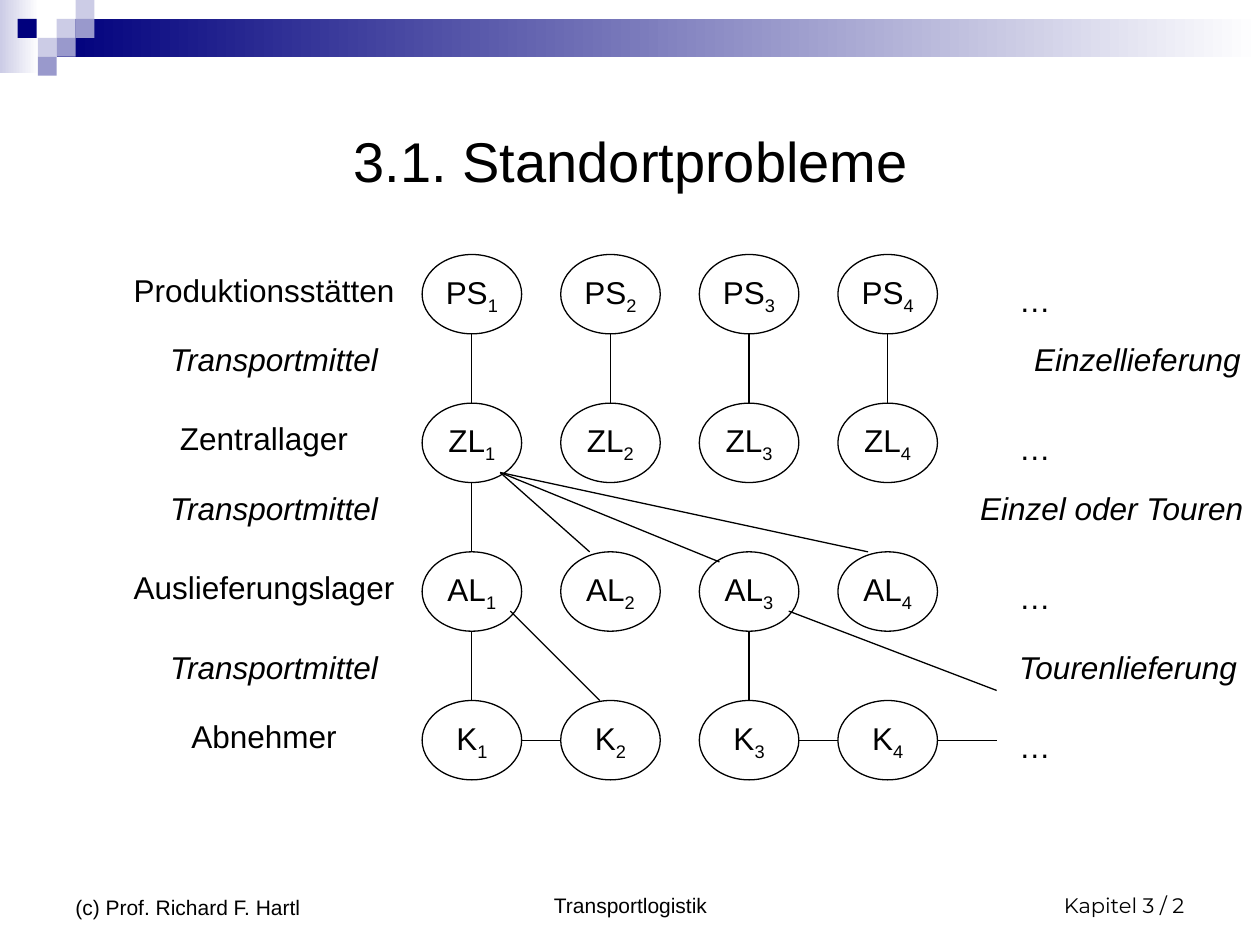
from lxml.etree import SubElement
from pptx import Presentation
from pptx.dml.color import RGBColor
from pptx.enum.shapes import MSO_CONNECTOR, MSO_SHAPE
from pptx.enum.text import MSO_ANCHOR, PP_ALIGN
from pptx.oxml.ns import qn
from pptx.util import Inches, Pt

BLACK = RGBColor(0x00, 0x00, 0x00)
WHITE = RGBColor(0xFF, 0xFF, 0xFF)
NAVY = RGBColor(0x00, 0x00, 0x7D)
LAVENDER = RGBColor(0xCC, 0xCC, 0xE6)
PERIWINKLE = RGBColor(0x99, 0x99, 0xCC)

NODE_WIDTH, NODE_HEIGHT = 0.79, 0.63
NODE_LEFT, NODE_TOP = 3.35, 2.02
COLUMN_STEP, ROW_STEP = 1.1, 1.18
COLUMNS = 4
LINK_END = 7.91
LABEL_WIDTH, LABEL_HEIGHT = 2.99, 0.47

# Name of the level, node prefix
LEVELS = [
    ("Produktionsstätten", "PS"),
    ("Zentrallager", "ZL"),
    ("Auslieferungslager", "AL"),
    ("Abnehmer", "K"),
]
# Top, left of the note, note
TRANSPORTS = [
    (2.65, 8.11, "Einzellieferung"),
    (3.83, 7.68, "Einzel oder Touren"),
    (5.09, 7.99, "Tourenlieferung"),
]
# Level, columns that have a straight link to the level below
VERTICAL_LINKS = [(0, range(COLUMNS)), (1, [0]), (2, [0, 2])]
SLANTED_LINKS = [
    ((3.97, 3.75), (4.68, 4.38)),
    ((3.97, 3.75), (5.71, 4.46)),
    ((3.97, 3.75), (6.89, 4.38)),
    ((4.05, 4.85), (4.76, 5.56)),
    ((6.26, 4.85), (LINK_END, 5.48)),
]
# Left, top, colour
HEADER_SQUARES = [
    (0.45, 0.15, LAVENDER),
    (0.6, 0, LAVENDER),
    (0.6, 0.15, PERIWINKLE),
    (0.3, 0.3, LAVENDER),
    (0.14, 0.15, NAVY),
    (0.45, 0.3, PERIWINKLE),
    (0.3, 0.45, PERIWINKLE),
]


class SlideBuilder:
    def __init__(self, slide, font="Arial", size=18):
        self.shapes = slide.shapes
        self.font = font
        self.size = size

    def style(self, para, align, size=None, font=None, italic=False):
        para.alignment = align
        para.font.name = font or self.font
        para.font.size = Pt(size or self.size)
        para.font.italic = italic
        para.font.color.rgb = BLACK

    def text(self, left, top, width, height, words, align=PP_ALIGN.LEFT,
             anchor=MSO_ANCHOR.TOP, **font_style):
        box = self.shapes.add_textbox(
            Inches(left), Inches(top), Inches(width), Inches(height))
        frame = box.text_frame
        frame.word_wrap = True
        frame.vertical_anchor = anchor
        para = frame.paragraphs[0]
        para.text = words
        self.style(para, align, **font_style)
        return para

    def label(self, left, top, words, italic=False):
        """Add a centred row label with a hanging indent."""
        para = self.text(left, top, LABEL_WIDTH, LABEL_HEIGHT, words,
                         PP_ALIGN.CENTER, italic=italic)
        properties = para._p.get_or_add_pPr()
        properties.set("marL", str(Inches(0.81)))
        properties.set("indent", str(Inches(-0.31)))

    def block(self, left, top, width, height, color, fade=False):
        """Add a rectangle, plain or fading to white on the right."""
        block = self.shapes.add_shape(
            MSO_SHAPE.RECTANGLE,
            Inches(left), Inches(top), Inches(width), Inches(height))
        block.shadow.inherit = False
        block.line.fill.background()
        if fade:
            block.fill.gradient()
            block.fill.gradient_angle = 0
            for stop, stop_color in zip(block.fill.gradient_stops, (color, WHITE)):
                stop.color.rgb = stop_color
        else:
            block.fill.solid()
            block.fill.fore_color.rgb = color

    def node(self, left, top, prefix, number):
        node = self.shapes.add_shape(
            MSO_SHAPE.OVAL, Inches(left), Inches(top),
            Inches(NODE_WIDTH), Inches(NODE_HEIGHT))
        node.shadow.inherit = False
        node.fill.background()
        node.line.color.rgb = BLACK
        node.line.width = Pt(0.75)
        frame = node.text_frame
        frame.word_wrap = False
        frame.vertical_anchor = MSO_ANCHOR.MIDDLE
        para = frame.paragraphs[0]
        self.style(para, PP_ALIGN.CENTER)
        para.add_run().text = prefix
        subscript = para.add_run()
        subscript.text = str(number)
        subscript.font._element.set("baseline", "-25000")
        return node

    def link(self, start, end, target=None):
        """Add a line; a target node is joined at its top."""
        line = self.shapes.add_connector(
            MSO_CONNECTOR.STRAIGHT, *(Inches(value) for value in (*start, *end)))
        line.line.color.rgb = BLACK
        line.line.width = Pt(0.75)
        SubElement(line._element.spPr, qn("a:effectLst"))
        if target is not None:
            line.end_connect(target, 0)


def add_header(builder):
    builder.block(0, 0, 0.31, 0.58, LAVENDER, fade=True)
    builder.block(0.45, 0.15, 9.55, 0.3, NAVY, fade=True)
    for left, top, color in HEADER_SQUARES:
        builder.block(left, top, 0.15, 0.15, color)


def add_footer(builder):
    style = {"anchor": MSO_ANCHOR.BOTTOM, "size": 12}
    builder.text(3.42, 6.83, 3.17, 0.5, "Transportlogistik",
                 PP_ALIGN.CENTER, **style)
    builder.text(7.17, 6.83, 2.33, 0.5, "Kapitel 3 / 2",
                 PP_ALIGN.RIGHT, font="Montserrat", **style)
    builder.text(0.5, 6.83, 2.33, 0.52, "(c) Prof. Richard F. Hartl", **style)


def add_network(builder):
    lefts = [NODE_LEFT + COLUMN_STEP * column for column in range(COLUMNS)]
    tops = [NODE_TOP + ROW_STEP * row for row in range(len(LEVELS))]

    nodes = []
    for top, (name, prefix) in zip(tops, LEVELS):
        builder.label(0.35, top + 0.08, name)
        nodes.append([builder.node(left, top, prefix, number)
                      for number, left in enumerate(lefts, 1)])
        builder.text(7.99, top + 0.16, 0.45, 0.4, "…")

    for top, note_left, note in TRANSPORTS:
        builder.label(0.43, top, "Transportmittel", italic=True)
        builder.text(note_left, top, 10 - note_left, 0.4, note, italic=True)

    for row, columns in VERTICAL_LINKS:
        for column in columns:
            center = lefts[column] + NODE_WIDTH / 2
            builder.link((center, tops[row] + NODE_HEIGHT),
                         (center, tops[row + 1]), nodes[row + 1][column])
    for start, end in SLANTED_LINKS:
        builder.link(start, end)

    middle = tops[-1] + NODE_HEIGHT / 2
    for column, end in ((0, lefts[1]), (2, lefts[3]), (3, LINK_END)):
        builder.link((lefts[column] + NODE_WIDTH, middle), (end, middle))


def main():
    deck = Presentation()
    deck.slide_width, deck.slide_height = Inches(10), Inches(7.5)
    builder = SlideBuilder(deck.slides.add_slide(deck.slide_layouts[6]))
    add_header(builder)
    add_footer(builder)
    builder.text(0.51, 0.52, 9, 1.5, "3.1. Standortprobleme",
                 PP_ALIGN.CENTER, MSO_ANCHOR.MIDDLE, size=32)
    add_network(builder)
    deck.save("out.pptx")


if __name__ == "__main__":
    main()
